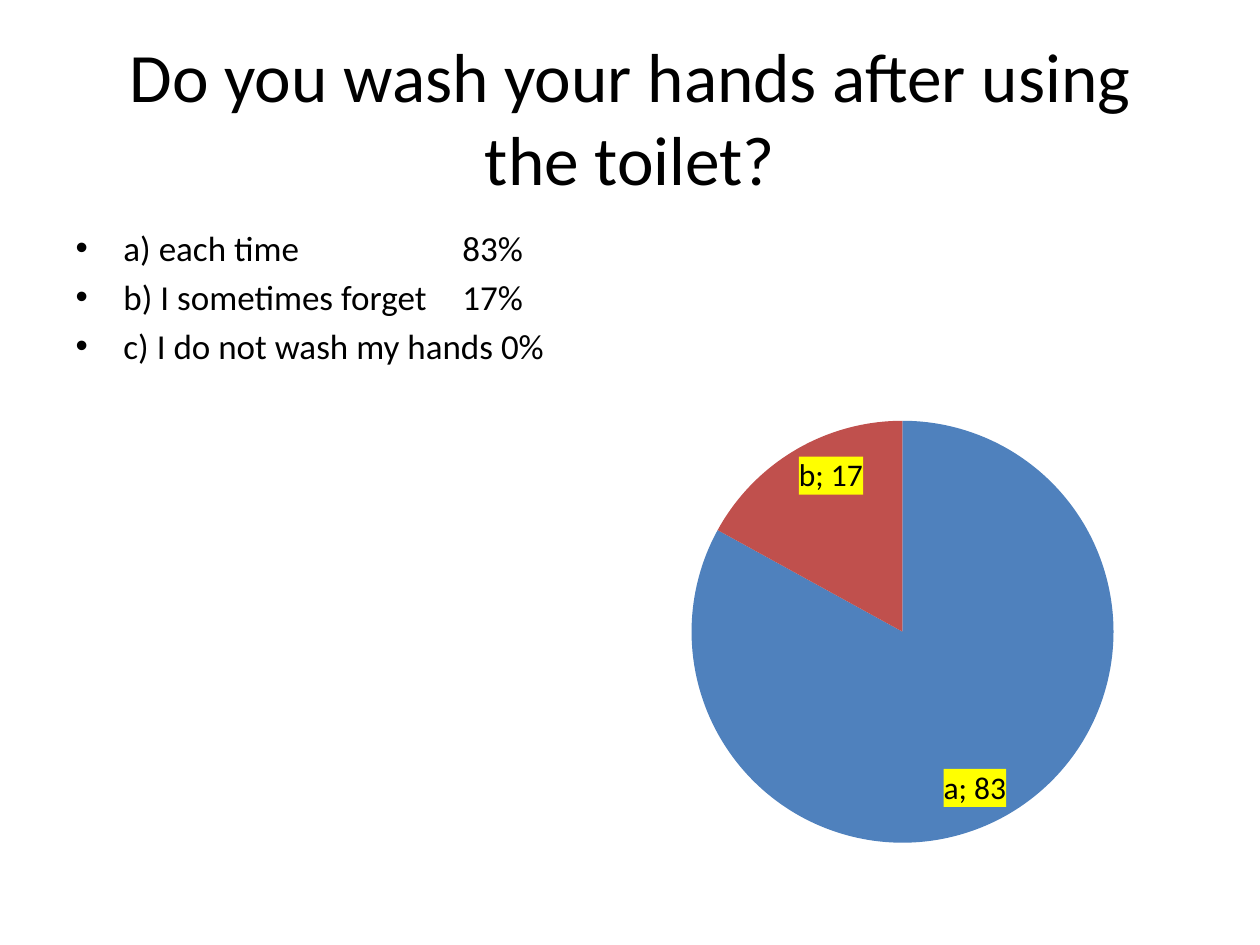
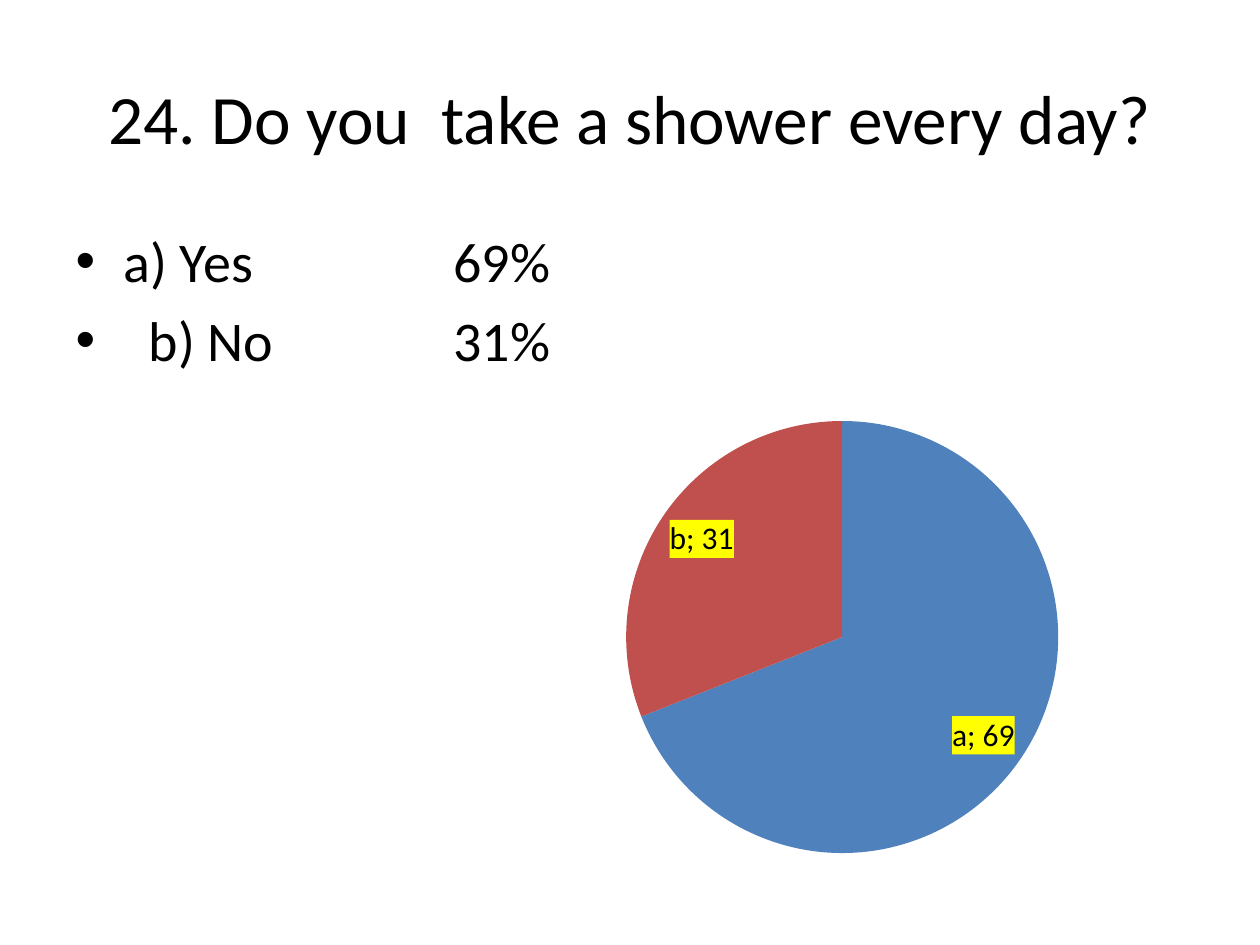
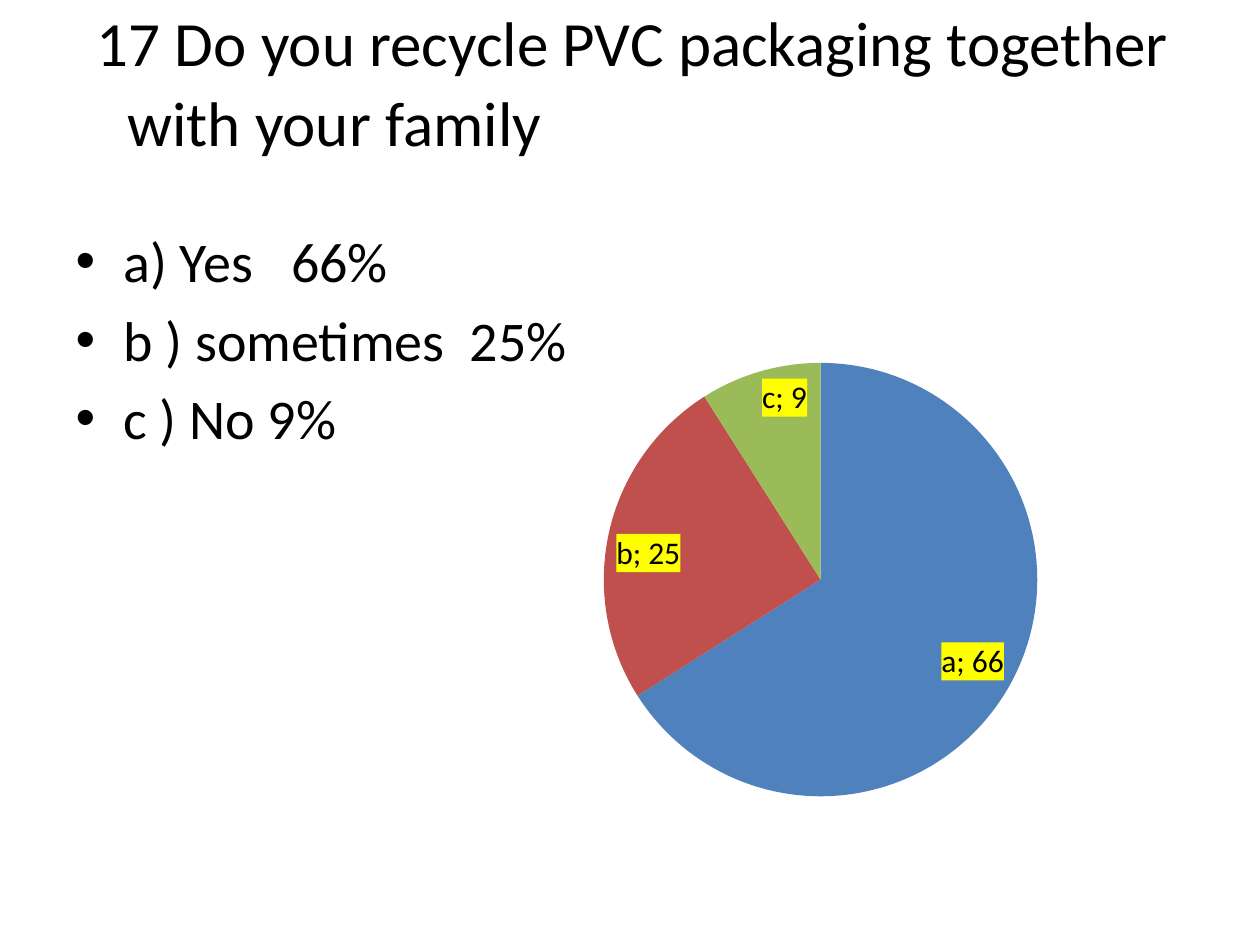
"""Build three survey slides, each with a question, its answers and a pie chart."""
from lxml import etree
from pptx import Presentation
from pptx import util as u
from pptx.chart import data as chart_data
from pptx.dml import color
from pptx.enum import chart as chart_enum
from pptx.enum import text
from pptx.oxml import parse_xml
from pptx.oxml import ns

COLOURS = {"text": "000000", "label": "FFFF00", "a": "4F81BD", "b": "C0504D", "c": "9BBB59"}
FONT = "Calibri"
TITLE_BOX = (0.5, 0.3, 9, 1.25)
BODY_BOX = (0.5, 1.75, 9, 4.95)
TITLE_SIZE = 39.6
LABEL_SIZE = 18


def rgb(name):
    """Return the named colour."""
    return color.RGBColor.from_string(COLOURS[name])


def set_attributes(target, values):
    """Set each attribute of the target from a dict."""
    for name, value in values.items():
        setattr(target, name, value)


def format_font(font, size):
    """Apply the shared typeface and text colour at a size."""
    set_attributes(font, {"name": FONT, "size": u.Pt(size)})
    font.color.rgb = rgb("text")


def place(shape, box):
    """Move a shape to a box given in inches."""
    set_attributes(shape, dict(zip(("left", "top", "width", "height"), map(u.Inches, box))))


def hang(paragraph, left, hanging):
    """Indent a paragraph with a hanging first line."""
    properties = paragraph._p.get_or_add_pPr()
    properties.set("marL", str(u.Inches(left)))
    properties.set("indent", str(-u.Inches(hanging)))


def add_tab_stop(paragraph, position):
    """Give a paragraph one left tab stop."""
    tabs = etree.SubElement(paragraph._p.get_or_add_pPr(), ns.qn("a:tabLst"))
    etree.SubElement(tabs, ns.qn("a:tab"), pos=str(u.Inches(position)), algn="l")


def add_title(slide, question, box=TITLE_BOX, size=TITLE_SIZE):
    """Write the question in the title placeholder and return its paragraph."""
    title = slide.shapes.title
    place(title, box)
    set_attributes(title.text_frame, {"text": question, "vertical_anchor": text.MSO_ANCHOR.MIDDLE})
    paragraph = title.text_frame.paragraphs[0]
    paragraph.alignment = text.PP_ALIGN.CENTER
    format_font(paragraph.runs[0].font, size)
    return paragraph


def add_answers(slide, answers, size):
    """List (answer, tab stop) pairs in the body placeholder and return its paragraphs."""
    body = slide.placeholders[1]
    place(body, BODY_BOX)
    frame = body.text_frame
    frame.text = "\n".join(answer for answer, _ in answers)
    for paragraph, (_, tab_stop) in zip(frame.paragraphs, answers):
        hang(paragraph, 0.38, 0.38)
        if tab_stop:
            add_tab_stop(paragraph, tab_stop)
        for run in paragraph.runs:
            format_font(run.font, size)
    return frame.paragraphs


def set_plot_layout(chart, box, pie):
    """Fix the pie, given as left, top and diameter in inches, inside the chart box."""
    left, top, width, height = box
    pie_left, pie_top, diameter = pie
    fractions = {"x": (pie_left - left) / width, "y": (pie_top - top) / height,
                 "w": diameter / width, "h": diameter / height}
    plot_area = chart._chartSpace.chart.plotArea
    for old_layout in plot_area.findall(ns.qn("c:layout")):
        plot_area.remove(old_layout)
    layout = etree.Element(ns.qn("c:layout"))
    manual = etree.SubElement(layout, ns.qn("c:manualLayout"))
    settings = {"layoutTarget": "inner", "xMode": "edge", "yMode": "edge"}
    settings.update({name: f"{value:.3f}" for name, value in fractions.items()})
    for name, value in settings.items():
        etree.SubElement(manual, ns.qn(f"c:{name}"), val=value)
    plot_area.insert(0, layout)


def add_labels(series, values):
    """Label each slice that has a value with its category and value on a coloured ground."""
    labels = series.data_labels
    set_attributes(labels, {
        "show_value": True, "show_category_name": True, "show_percentage": False,
        "show_legend_key": False, "number_format": "0", "number_format_is_linked": False,
        "position": chart_enum.XL_LABEL_POSITION.INSIDE_END})
    format_font(labels.font, LABEL_SIZE)
    element = labels._element
    element.find(ns.qn("c:txPr")).addprevious(parse_xml(
        f'<c:spPr {ns.nsdecls("c", "a")}><a:solidFill>'
        f'<a:srgbClr val="{COLOURS["label"]}"/></a:solidFill></c:spPr>'))
    separator = etree.Element(ns.qn("c:separator"))
    separator.text = "; "
    element.find(ns.qn("c:showBubbleSize")).addnext(separator)
    empty = [index for index, value in enumerate(values) if not value]
    for position, index in enumerate(empty):
        element.insert(position, parse_xml(
            f'<c:dLbl {ns.nsdecls("c")}><c:idx val="{index}"/><c:delete val="1"/></c:dLbl>'))


def add_pie(slide, values, box, pie):
    """Add a labelled pie chart of the answer shares."""
    categories = "abc"[:len(values)]
    shares = chart_data.CategoryChartData(number_format="0")
    shares.categories = list(categories)
    shares.add_series("Series 1", values)
    chart = slide.shapes.add_chart(
        chart_enum.XL_CHART_TYPE.PIE, *map(u.Inches, box), shares).chart
    set_attributes(chart, {"has_title": False, "has_legend": False})
    format_font(chart.font, 10)
    plot = chart.plots[0]
    plot.vary_by_categories = True
    series = plot.series[0]
    for index, category in enumerate(categories):
        fill = series.points[index].format.fill
        fill.solid()
        fill.fore_color.rgb = rgb(category)
    add_labels(series, values)
    set_plot_layout(chart, box, pie)


def add_hands_slide(slide):
    """Fill the slide on washing hands."""
    add_title(slide, "Do you wash your hands after using the toilet?")
    add_answers(slide, [("a) each time\t83%", 3.07), ("b) I sometimes forget\t17%", 3.07),
                        ("c) I do not wash my hands 0%", None)], 20)
    add_pie(slide, (83, 17, 0), (4.45, 2.96, 5.3, 3.87), (5.49, 3.34, 3.35))


def add_shower_slide(slide):
    """Fill the slide on daily showers."""
    add_title(slide, "24. Do you  take a shower every day?")
    answers = add_answers(slide, [("a) Yes\t69%", 3), ("b) No\t31%", 3)], 32)
    hang(answers[1], 0.58, 0.58)
    add_pie(slide, (69, 31), (4.06, 3.2, 5.26, 3.71), (4.97, 3.34, 3.43))


def add_recycling_slide(slide):
    """Fill the slide on recycling."""
    title = add_title(slide, "17 Do you recycle PVC packaging together with your family",
                      (0.5, 0, 9, 1.25), 36)
    set_attributes(title, {"alignment": text.PP_ALIGN.LEFT, "line_spacing": 1.07})
    hang(title, 0.41, 0.24)
    add_answers(slide, [("a) Yes\t66%", 1.71), ("b ) sometimes\t25%", 3.13),
                        ("c ) No 9%", None)], 32)
    add_pie(slide, (66, 25, 9), (4.37, 2.88, 5.41, 3.63), (4.79, 2.88, 3.44))


def main():
    """Build and save the presentation."""
    presentation = Presentation()
    set_attributes(presentation, {"slide_width": u.Inches(10), "slide_height": u.Inches(7.5)})
    layout = presentation.slide_layouts[1]
    for fill_slide in (add_hands_slide, add_shower_slide, add_recycling_slide):
        fill_slide(presentation.slides.add_slide(layout))
    presentation.save("out.pptx")


if __name__ == "__main__":
    main()
